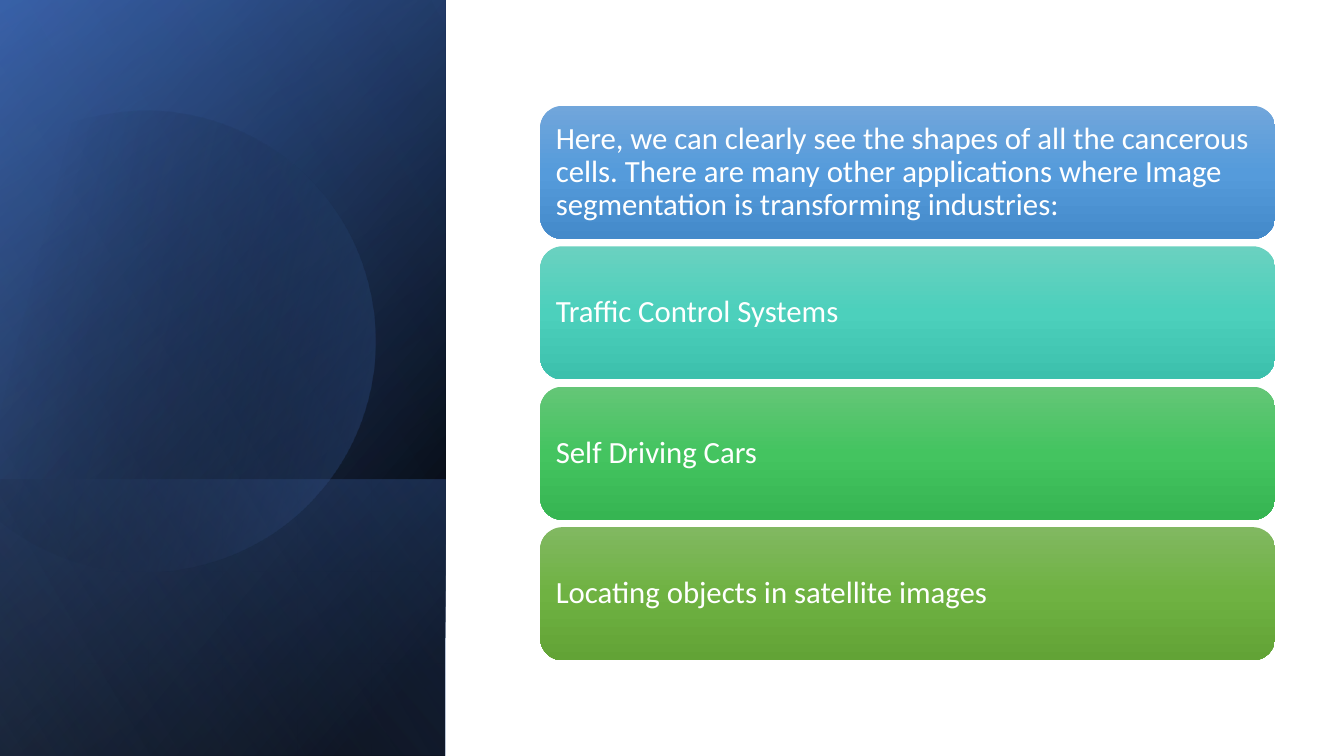
"""Build a slide with a dark decorative panel and four gradient cards."""
from dataclasses import dataclass
from math import cos, radians, sin

from pptx import Presentation, util as u
from pptx.dml.color import RGBColor
from pptx.enum import shapes, text
from pptx.oxml import ns, parse_xml
from pptx.shapes.autoshape import Shape
from pptx.slide import Slide

BLACK = RGBColor(0x00, 0x00, 0x00)
WHITE = RGBColor(0xFF, 0xFF, 0xFF)
NAVY = RGBColor(0x2F, 0x55, 0x97)
BLUE = RGBColor(0x44, 0x72, 0xC4)
PALE_BLUE = RGBColor(0x8F, 0xAA, 0xDC)
SKY = (RGBColor(0x71, 0xA6, 0xDB), RGBColor(0x55, 0x9B, 0xDB), RGBColor(0x44, 0x8A, 0xCA))
TEAL = (RGBColor(0x6A, 0xD1, 0xC0), RGBColor(0x4C, 0xD0, 0xBC), RGBColor(0x3C, 0xC0, 0xAC))
GREEN = (RGBColor(0x64, 0xC6, 0x77), RGBColor(0x44, 0xC4, 0x60), RGBColor(0x36, 0xB5, 0x52))
OLIVE = (RGBColor(0x81, 0xB8, 0x61), RGBColor(0x6F, 0xB2, 0x42), RGBColor(0x62, 0xA3, 0x36))

SLIDE_WIDTH, SLIDE_HEIGHT = 40 / 3, 7.5
PANEL_WIDTH = 4.42
CARD_LEFT, CARD_WIDTH, CARD_HEIGHT = 5.36, 7.29, 1.32
FIRST_CARD_TOP, LAST_CARD_TOP = 1.05, 5.23

Point = tuple[float, float]


@dataclass(frozen=True)
class Stop:
    position: int
    color: RGBColor
    opacity: int = 100


@dataclass(frozen=True)
class Layer:
    top: float
    angle: int
    stops: tuple[Stop, ...]


@dataclass(frozen=True)
class Card:
    label: str
    colors: tuple[RGBColor, ...]


BACK_LAYERS = (
    Layer(0, 50, (Stop(8, BLACK), Stop(100, NAVY))),
    Layer(0, 30, (Stop(0, BLACK, 0), Stop(99, BLUE, 46))),
    Layer(4.76, 130, (Stop(2, BLUE, 29), Stop(100, BLACK, 30))),
)
SHEEN = Layer(0, 120, (Stop(0, BLACK, 0), Stop(99, PALE_BLUE, 11)))

DISC_LEFT, DISC_TOP, DISC_WIDTH, DISC_HEIGHT = -0.55, 1.06, 4.27, 4.57
DISC_TURN = 343.9
DISC_STOPS = (Stop(29, BLACK, 0), Stop(100, BLUE, 43))
DISC_OUTLINE: tuple[tuple[str, tuple[Point, ...]], ...] = (
    ("moveTo", ((1.49, 1.1),)),
    ("cubicBezTo", ((2.46, 1.12), (3.35, 1.77), (3.63, 2.75))),
    ("cubicBezTo", ((3.98, 3.97), (3.28, 5.23), (2.07, 5.58))),
    ("cubicBezTo", ((1.31, 5.8), (0.53, 5.61), (-0.03, 5.14))),
    ("lnTo", ((-0.15, 5.03),)),
    ("lnTo", ((-0.15, 1.75),)),
    ("lnTo", ((0, 1.61),)),
    ("cubicBezTo", ((0.23, 1.42), (0.5, 1.28), (0.8, 1.19))),
    ("cubicBezTo", ((1.03, 1.13), (1.26, 1.1), (1.49, 1.1))),
)

CARDS = (
    Card("Here, we can clearly see the shapes of all the cancerous cells. There are many "
         "other applications where Image segmentation is transforming industries:", SKY),
    Card("Traffic Control Systems", TEAL),
    Card("Self Driving Cars", GREEN),
    Card("Locating objects in satellite images", OLIVE),
)

FRAME_FORMAT = {
    "word_wrap": True,
    "vertical_anchor": text.MSO_ANCHOR.MIDDLE,
    **{f"margin_{side}": u.Inches(0.09) for side in ("left", "top", "right", "bottom")},
}
PARA_FORMAT = {"alignment": text.PP_ALIGN.LEFT, "line_spacing": 0.9}
FONT_FORMAT = {"name": "Calibri", "size": u.Pt(22)}
DISC_FORMAT = {
    "left": u.Inches(DISC_LEFT), "top": u.Inches(DISC_TOP),
    "width": u.Inches(DISC_WIDTH), "height": u.Inches(DISC_HEIGHT),
    "rotation": DISC_TURN,
}


def apply_format(target: object, values: dict[str, object]) -> None:
    """Set each named attribute on the target."""
    for name, value in values.items():
        setattr(target, name, value)


def paint(shape: Shape, stops: tuple[Stop, ...], angle: int) -> None:
    """Give a shape a linear gradient without line or shadow."""
    shape.shadow.inherit = False
    shape.line.fill.background()
    shape.fill.background()
    marks = "".join(
        f'<a:gs pos="{stop.position * 1000}"><a:srgbClr val="{stop.color}">'
        f'<a:alpha val="{stop.opacity * 1000}"/></a:srgbClr></a:gs>'
        for stop in stops
    )
    gradient = parse_xml(
        f'<a:gradFill {ns.nsdecls("a")} rotWithShape="1"><a:gsLst>{marks}</a:gsLst>'
        f'<a:lin ang="{angle * 60000}" scaled="0"/></a:gradFill>'
    )
    properties = shape.element.spPr
    properties.replace(properties.find(ns.qn("a:noFill")), gradient)


def draw_layer(page: Slide, layer: Layer) -> None:
    """Draw a mirrored, quarter-turned panel from the layer top to the slide bottom."""
    length = SLIDE_HEIGHT - layer.top
    shift = (PANEL_WIDTH - length) / 2
    box = page.shapes.add_shape(
        shapes.MSO_SHAPE.RECTANGLE, u.Inches(shift), u.Inches(layer.top - shift),
        u.Inches(length), u.Inches(PANEL_WIDTH))
    box.rotation = 90
    box.element.spPr.xfrm.set("flipH", "1")
    paint(box, layer.stops, layer.angle)


def disc_point(point: Point) -> str:
    """Return a page point as a path point in the turned disc's own frame."""
    x = point[0] - DISC_LEFT - DISC_WIDTH / 2
    y = point[1] - DISC_TOP - DISC_HEIGHT / 2
    turn = radians(-DISC_TURN)
    across = x * cos(turn) - y * sin(turn) + DISC_WIDTH / 2
    down = x * sin(turn) + y * cos(turn) + DISC_HEIGHT / 2
    return f'<a:pt x="{u.Inches(across)}" y="{u.Inches(down)}"/>'


def draw_disc(page: Slide) -> None:
    """Draw the translucent disc with curved outline."""
    anchors = [points[-1] for _, points in DISC_OUTLINE]
    builder = page.shapes.build_freeform(*anchors[0], scale=u.Inches(1))
    builder.add_line_segments(anchors[1:], close=True)
    disc = builder.convert_to_shape()
    apply_format(disc, DISC_FORMAT)
    moves = "".join(
        f'<a:{kind}>{"".join(map(disc_point, points))}</a:{kind}>'
        for kind, points in DISC_OUTLINE
    )
    outline = parse_xml(
        f'<a:path {ns.nsdecls("a")} w="{disc.width}" h="{disc.height}">{moves}<a:close/></a:path>'
    )
    straight = next(disc.element.iter(ns.qn("a:path")))
    straight.getparent().replace(straight, outline)
    paint(disc, DISC_STOPS, 30)


def draw_card(page: Slide, card: Card, top: float) -> None:
    """Draw a rounded gradient card with its label."""
    box = page.shapes.add_shape(
        shapes.MSO_SHAPE.ROUNDED_RECTANGLE, u.Inches(CARD_LEFT), u.Inches(top),
        u.Inches(CARD_WIDTH), u.Inches(CARD_HEIGHT))
    paint(box, tuple(Stop(50 * i, color) for i, color in enumerate(card.colors)), 90)
    apply_format(box.text_frame, FRAME_FORMAT)
    para = box.text_frame.paragraphs[0]
    apply_format(para, PARA_FORMAT)
    span = para.add_run()
    span.text = card.label
    apply_format(span.font, FONT_FORMAT)
    span.font.color.rgb = WHITE


def main() -> None:
    """Build and save the deck."""
    deck = Presentation()
    deck.slide_width, deck.slide_height = u.Inches(SLIDE_WIDTH), u.Inches(SLIDE_HEIGHT)
    page = deck.slides.add_slide(deck.slide_layouts.get_by_name("Blank"))
    for layer in BACK_LAYERS:
        draw_layer(page, layer)
    draw_disc(page)
    draw_layer(page, SHEEN)
    step = (LAST_CARD_TOP - FIRST_CARD_TOP) / (len(CARDS) - 1)
    for row, card in enumerate(CARDS):
        draw_card(page, card, FIRST_CARD_TOP + row * step)
    deck.save("out.pptx")


if __name__ == "__main__":
    main()
